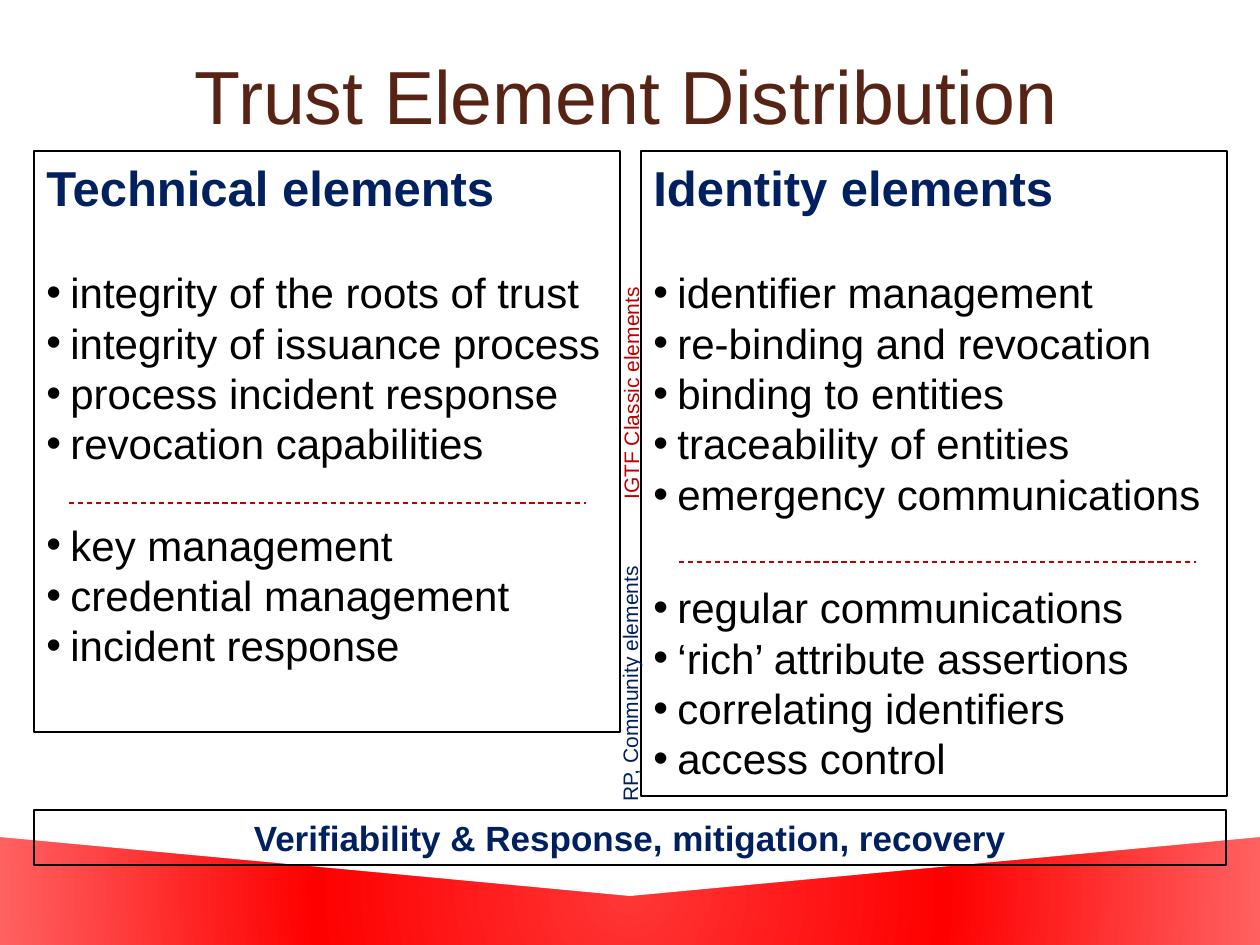
from lxml import etree
from pptx import Presentation, util as u
from pptx.dml.color import RGBColor
from pptx.enum import dml, shapes, text
from pptx.oxml import parse_xml
from pptx.oxml.ns import nsdecls, qn

PX = 914400 / 126
HUE = {"title": "572314", "head": "002060", "body": "000000", "dash": "C00000",
       "red": "FF0000", "core": "FF3636", "rim": "FF6161", "white": "FFFFFF"}


def px(*vals):
    return [round(v * PX) for v in vals]


def write(para, line, size, hue, bold=False):
    para.text = line
    font = para.font
    font.name, font.size, font.bold = "Arial", u.Pt(size), bold
    font.color.rgb = RGBColor.from_string(HUE[hue])


deck = Presentation()
deck.slide_width, deck.slide_height = px(1260, 945)
slide = deck.slides.add_slide(deck.slide_layouts[6])
items = slide.shapes
KIND = shapes.MSO_SHAPE

# Red band with a white wedge cut into its top
band = items.add_shape(KIND.RECTANGLE, *px(0, 837, 1260, 108))
wedge = items.add_shape(KIND.ISOSCELES_TRIANGLE, *px(0, 837, 1260, 59))
wedge.rotation = 180
for part in (band, wedge):
    part.shadow.inherit = False
    part.line.fill.background()
wedge.fill.solid()
wedge.fill.fore_color.rgb = RGBColor.from_string(HUE["white"])
stops = "".join(f'<a:gs pos="{pos}"><a:srgbClr val="{HUE[hue]}"/></a:gs>'
                for pos, hue in ((0, "core"), (50000, "red"), (100000, "rim")))
band._element.spPr.find(qn("a:prstGeom")).addnext(parse_xml(
    f'<a:gradFill {nsdecls("a")} rotWithShape="1"><a:gsLst>{stops}</a:gsLst>'
    '<a:path path="circle"><a:fillToRect l="50000" t="50000" r="50000" b="50000"/>'
    '</a:path></a:gradFill>'))

title = items.add_textbox(*px(84, 38, 1084, 113)).text_frame
title.word_wrap = True
title.vertical_anchor = text.MSO_ANCHOR.MIDDLE
write(title.paragraphs[0], "Trust Element Distribution", 43, "title")
title.paragraphs[0].alignment = text.PP_ALIGN.CENTER

# Framed boxes: left, top, width, height, heading, size, gap between groups, groups
BOXES = [
    (34, 151, 586, 581, "Technical elements", 28, 29, [
        ["integrity of the roots of trust", "integrity of issuance process",
         "process incident response", "revocation capabilities"],
        ["key management", "credential management", "incident response"]]),
    (641, 151, 586, 645, "Identity elements", 28, 36, [
        ["identifier management", "re-binding and revocation", "binding to entities",
         "traceability of entities", "emergency communications"],
        ["regular communications", "‘rich’ attribute assertions",
         "correlating identifiers", "access control"]]),
    (34, 810, 1192, 55, "Verifiability & Response, mitigation, recovery", 20, 0, []),
]
for left, top, wide, high, head, size, gap, groups in BOXES:
    box = items.add_shape(KIND.RECTANGLE, *px(left, top, wide, high))
    box.shadow.inherit = False
    box.fill.background()
    box.line.color.rgb = RGBColor.from_string(HUE["body"])
    box.line.width = u.Pt(0.75)
    frame = box.text_frame
    frame.word_wrap = True
    frame.vertical_anchor = text.MSO_ANCHOR.TOP
    para = frame.paragraphs[0]
    write(para, head, size, "head", True)
    para.alignment = text.PP_ALIGN.LEFT if groups else text.PP_ALIGN.CENTER
    for g, group in enumerate(groups):
        for i, line in enumerate(group):
            para = frame.add_paragraph()
            props = para._p.get_or_add_pPr()
            props.set("marL", str(px(24)[0]))
            props.set("indent", str(px(-24)[0]))
            etree.SubElement(props, qn("a:buFont")).set("typeface", "Arial")
            etree.SubElement(props, qn("a:buChar")).set("char", "•")
            write(para, line, 24, "body")
            para.alignment = text.PP_ALIGN.LEFT
            para.space_before = u.Pt(0 if i else gap if g else 29)

# Dashed dividers
for left, y in ((679, 562), (69, 503)):
    rule = items.add_connector(shapes.MSO_CONNECTOR.STRAIGHT, *px(left, y, left + 517, y))
    rule.line.color.rgb = RGBColor.from_string(HUE["dash"])
    rule.line.width = u.Pt(0.75)
    rule.line.dash_style = dml.MSO_LINE.DASH
    etree.SubElement(rule._element.spPr, qn("a:effectLst"))

# Upright labels between the columns
for left, top, wide, line, hue in (
        (508, 370, 246, "IGTF Classic elements", "dash"),
        (499, 664, 262, "RP, Community elements", "head")):
    label = items.add_textbox(*px(left, top, wide, 38))
    label.rotation = 270
    label.text_frame.word_wrap = False
    write(label.text_frame.paragraphs[0], line, 12, hue)

deck.save("out.pptx")
